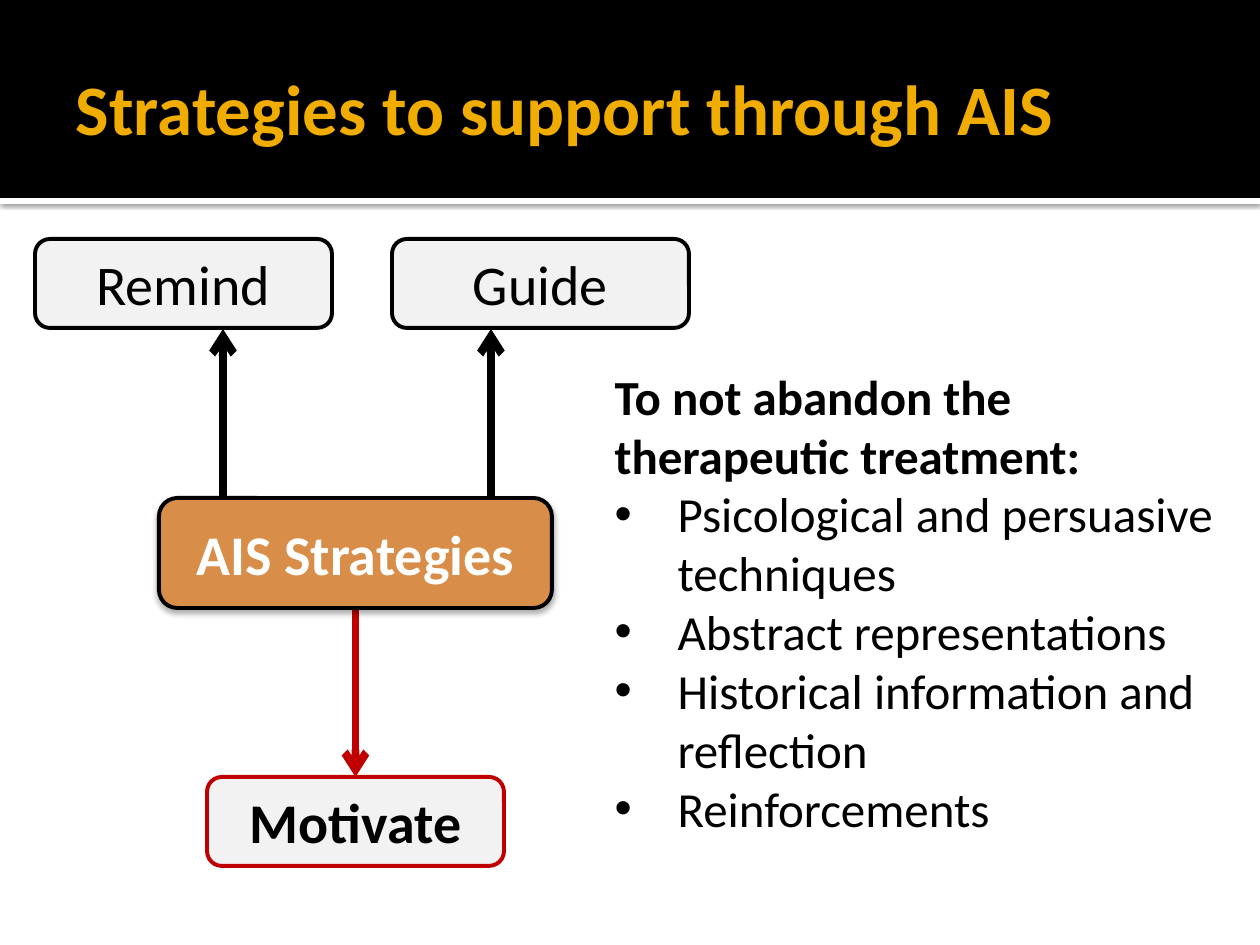
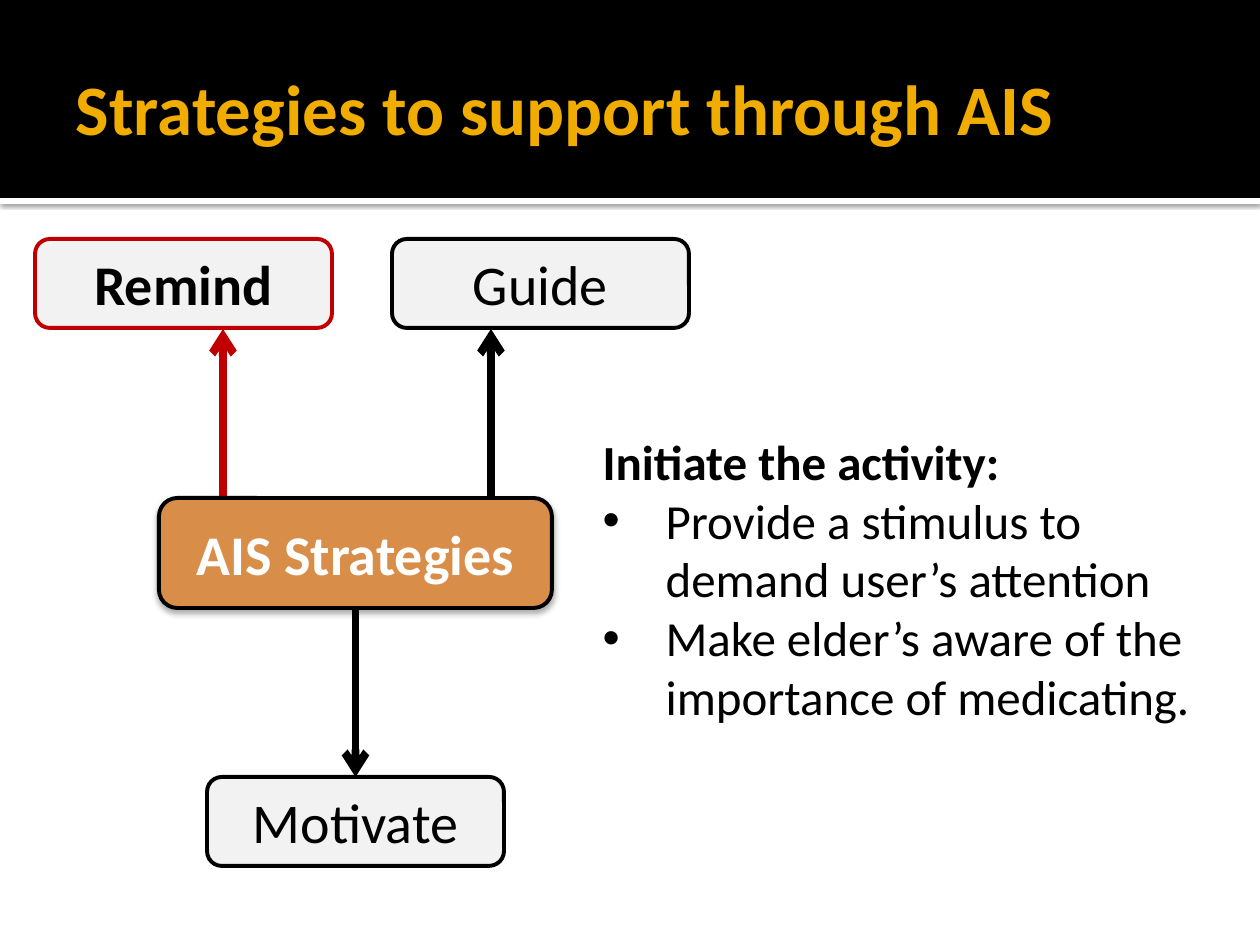
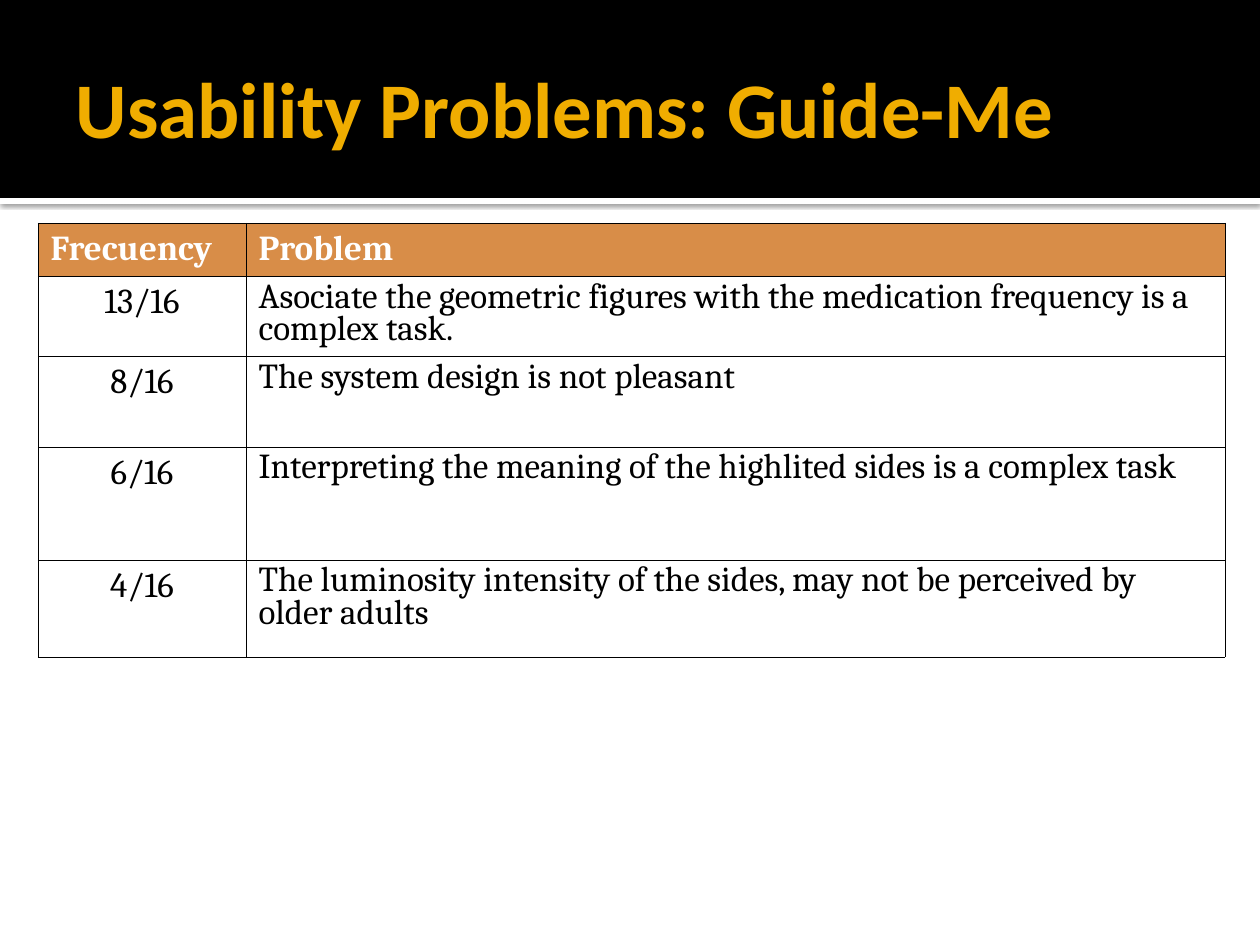
import pptx
import pptx.dml.color
import pptx.enum.shapes
import pptx.enum.text
import pptx.oxml
import pptx.oxml.ns
import pptx.util

BLACK, WHITE, GOLD = "000000", "FFFFFF", "F0AD00"
ORANGE, GREY, RED = "D88D48", "F2F2F2", "C00000"
RECT = pptx.enum.shapes.MSO_SHAPE.RECTANGLE
ROUNDED = pptx.enum.shapes.MSO_SHAPE.ROUNDED_RECTANGLE
STRAIGHT = pptx.enum.shapes.MSO_CONNECTOR.STRAIGHT
LEFT = pptx.enum.text.PP_ALIGN.LEFT
CENTER = pptx.enum.text.PP_ALIGN.CENTER
MIDDLE = pptx.enum.text.MSO_ANCHOR.MIDDLE
TOP = pptx.enum.text.MSO_ANCHOR.TOP
FIT_NONE = pptx.enum.text.MSO_AUTO_SIZE.NONE
FIT_SHAPE = pptx.enum.text.MSO_AUTO_SIZE.SHAPE_TO_FIT_TEXT
qn = pptx.oxml.ns.qn

DIAGRAM_BOX = (35, 239, 655, 627)
TITLE = "Strategies to support through AIS"


def px(n):
    return pptx.util.Emu(round(n * 914400 / 126))


def rgb(value):
    return pptx.dml.color.RGBColor.from_string(value)


def add_xml(parent, xml):
    ns = pptx.oxml.ns.nsdecls("a")
    parent.append(pptx.oxml.parse_xml(f"<a:root {ns}>{xml}</a:root>")[0])


def place(sp, box):
    for name, value in zip(("left", "top", "width", "height"), box):
        setattr(sp, name, px(value))


def set_text(p, text, size, color=BLACK, bold=False, align=LEFT, font="Calibri"):
    r = p.add_run()
    r.text = text
    p.alignment = align
    values = {"name": font, "size": pptx.util.Pt(size), "bold": bold}
    for name, value in values.items():
        setattr(r.font, name, value)
    r.font.color.rgb = rgb(color)


def add_box(s, kind, box, fill, line=None, shadow=None):
    sp = s.shapes.add_shape(kind, *map(px, box))
    sp.fill.solid()
    sp.fill.fore_color.rgb = rgb(fill)
    if line:
        sp.line.color.rgb = rgb(line)
        sp.line.width = pptx.util.Pt(2.25)
    else:
        sp.line.fill.background()
    sp.shadow.inherit = False
    if shadow:
        alpha, blur, dist = shadow
        add_xml(sp._element.spPr.find(qn("a:effectLst")),
                f'<a:outerShdw blurRad="{pptx.util.Pt(blur)}" dist="{pptx.util.Pt(dist)}" '
                f'dir="5400000"><a:srgbClr val="{BLACK}"><a:alpha val="{alpha}000"/>'
                '</a:srgbClr></a:outerShdw>')
    return sp


def add_node(s, box, text, fill=GREY, line=BLACK, color=BLACK, bold=False, shadow=None):
    sp = add_box(s, ROUNDED, box, fill, line, shadow)
    tf = sp.text_frame
    tf.vertical_anchor = MIDDLE
    set_text(tf.paragraphs[0], text, 32, color, bold, CENTER)
    return sp


def add_arrow(s, start, end, color):
    line = s.shapes.add_connector(STRAIGHT, *map(px, start + end))
    line.line.color.rgb = rgb(color)
    line.line.width = pptx.util.Pt(4.5)
    spPr = line._element.spPr
    add_xml(spPr.find(qn("a:ln")), '<a:tailEnd type="arrow"/>')
    add_xml(spPr, '<a:effectLst/>')
    return line


def set_up_master(prs, s):
    """Header bands and title frame, shared by every slide."""
    master = prs.slide_master
    bands = [add_box(s, RECT, (0, 198, 1260, 6), WHITE, shadow=(60, 2.5, 0.8)),
             add_box(s, RECT, (0, 0, 1260, 198), BLACK)]
    for i, band in enumerate(bands):
        band._element.nvSpPr.cNvPr.set("id", str(101 + i))
        master.shapes._spTree.insert(2 + i, band._element)
    title = next(ph for ph in master.placeholders if ph.placeholder_format.type
                 == pptx.enum.shapes.PP_PLACEHOLDER.TITLE)
    place(title, (63, 21, 1134, 173))
    frame = {"auto_size": FIT_NONE, "vertical_anchor": MIDDLE, "margin_left": px(13),
             "margin_right": px(6), "margin_top": px(6), "margin_bottom": px(6)}
    for name, value in frame.items():
        setattr(title.text_frame, name, value)


def add_title(s, text, size):
    set_text(s.shapes.title.text_frame.paragraphs[0], text, size, GOLD, True)


def add_diagram(s, box, highlight):
    """Hub with three strategies, one of them highlighted."""
    x, y = box[:2]
    leaf_w, leaf_h = 297, 89
    hub_box = (x + 124, y + 259, 393, 110)
    leaves = {"Remind": (0, 0), "Guide": (357, 0), "Motivate": (172, 538)}
    colors = {name: RED if name == highlight else BLACK for name in leaves}
    nodes = {name: add_node(s, (x + dx, y + dy, leaf_w, leaf_h), name,
                            line=colors[name], bold=name == highlight)
             for name, (dx, dy) in leaves.items()}
    # Arrows up from the hub
    for name, dx in (("Guide", 456), ("Remind", 188)):
        add_arrow(s, (x + dx, hub_box[1]), (x + dx, y + leaf_h + 1), colors[name])
    # Arrow down from the hub
    down = add_arrow(s, (x + 320, y + 369), (x + 320, y + 538), colors["Motivate"])
    hub = add_node(s, hub_box, "AIS Strategies", ORANGE, color=WHITE, bold=True,
                   shadow=(32, 3.5, 2.2))
    hub.text_frame.word_wrap = False
    down.begin_connect(hub, 2)
    down.end_connect(nodes["Motivate"], 0)


def add_list(s, box, heading, items):
    body = s.placeholders[1]
    place(body, box)
    tf = body.text_frame
    for name, value in {"word_wrap": True, "auto_size": FIT_SHAPE,
                        "vertical_anchor": TOP}.items():
        setattr(tf, name, value)
    for i, text in enumerate([heading] + items):
        p = tf.add_paragraph() if i else tf.paragraphs[0]
        pPr = p._p.get_or_add_pPr()
        indent = px(63) if i else 0
        pPr.set("marL", str(int(indent)))
        pPr.set("indent", str(-int(indent)))
        if i:
            add_xml(pPr, '<a:buFont typeface="Arial"/>')
            add_xml(pPr, '<a:buChar char="•"/>')
        else:
            add_xml(pPr, '<a:buNone/>')
        p.space_before = pptx.util.Pt(0)
        set_text(p, text, 28, bold=not i)


def add_strategy_slide(s, highlight, list_box, heading, items):
    add_title(s, TITLE, 40.5)
    add_diagram(s, DIAGRAM_BOX, highlight)
    add_list(s, list_box, heading, items)


def set_cell(cell, text, fill, **style):
    tcPr = cell._tc.get_or_add_tcPr()
    for side in "LRTB":
        add_xml(tcPr, f'<a:ln{side} w="{pptx.util.Pt(0.25)}"><a:solidFill>'
                      f'<a:srgbClr val="{BLACK}"/></a:solidFill></a:ln{side}>')
    cell.fill.solid()
    cell.fill.fore_color.rgb = rgb(fill)
    set_text(cell.text_frame.paragraphs[0], text, 20, font="Cambria", **style)


def add_problem_table(s, box, rows):
    table = s.shapes.add_table(len(rows), 2, *map(px, box)).table
    table.horz_banding = False
    for column, width in zip(table.columns, (208, box[2] - 208)):
        column.width = px(width)
    for row, height in zip(table.rows, (53, 80, 91, 113, 97)):
        row.height = px(height)
    for i, (frequency, problem) in enumerate(rows):
        left, right = table.cell(i, 0), table.cell(i, 1)
        if i == 0:
            for cell, text in ((left, frequency), (right, problem)):
                set_cell(cell, text, ORANGE, color=WHITE, bold=True)
        else:
            set_cell(left, frequency, WHITE, align=CENTER)
            set_cell(right, problem, WHITE)
            right.text_frame.paragraphs[0].line_spacing = 0.8


def main():
    prs = pptx.Presentation()
    prs.slide_width, prs.slide_height = px(1260), px(945)
    content, title_only = prs.slide_layouts[1], prs.slide_layouts[5]

    # Motivate
    s = prs.slides.add_slide(content)
    set_up_master(prs, s)
    add_strategy_slide(s, "Motivate", (602, 360, 658, 488),
                       "To not abandon the therapeutic treatment:",
                       ["Psicological and persuasive techniques",
                        "Abstract representations",
                        "Historical information and reflection",
                        "Reinforcements"])

    # Remind
    s = prs.slides.add_slide(content)
    add_strategy_slide(s, "Remind", (590, 425, 651, 310),
                       "Initiate the activity:",
                       ["Provide a stimulus to demand user’s attention",
                        "Make elder’s aware of the importance of medicating."])

    # Usability problems
    s = prs.slides.add_slide(title_only)
    add_title(s, "Usability Problems: Guide-Me", 45)
    add_problem_table(s, (38, 223, 1187, 434), [
        ("Frecuency", "Problem"),
        ("13/16", "Asociate the geometric figures with the medication frequency "
                  "is a complex task."),
        ("8/16", "The system design is not pleasant"),
        ("6/16", "Interpreting the meaning of the highlited sides is a complex task"),
        ("4/16", "The luminosity intensity of the sides, may not be perceived by "
                 "older adults")])

    prs.save("out.pptx")


if __name__ == "__main__":
    main()
